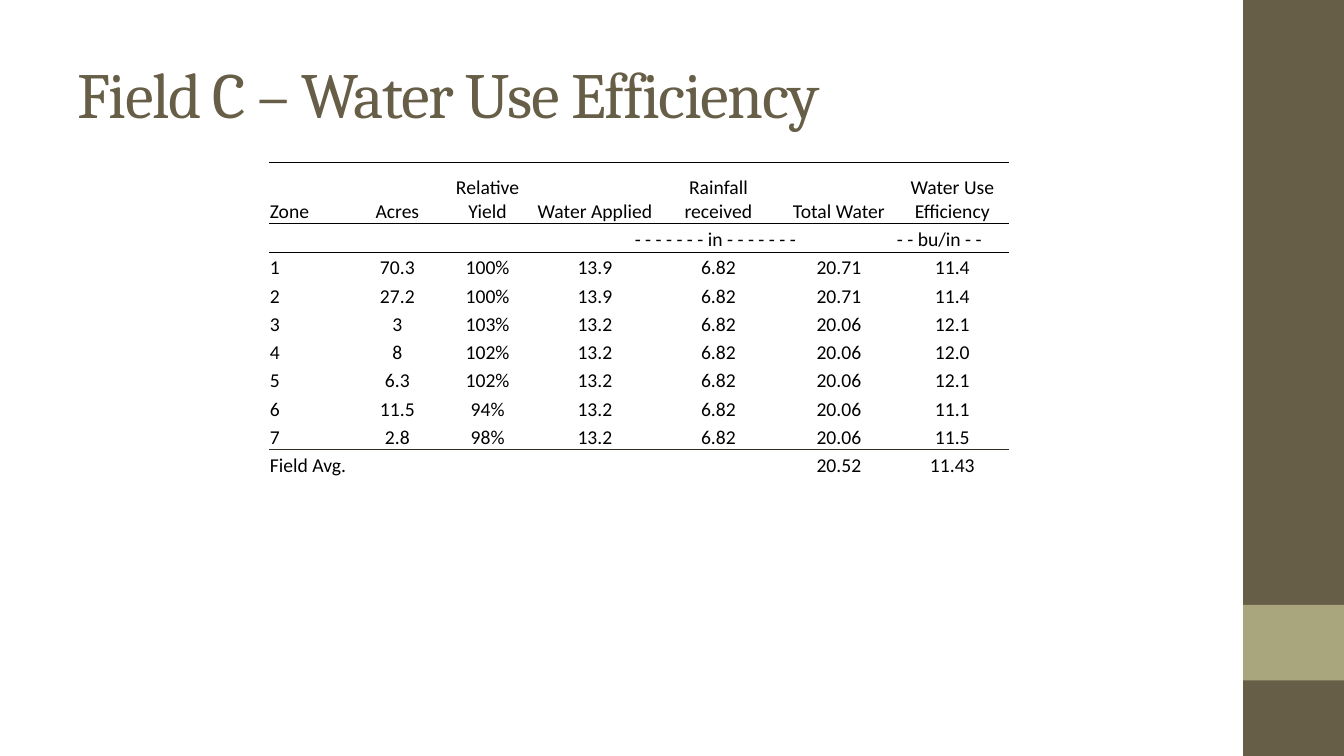
from dataclasses import dataclass

from lxml import etree
from pptx import Presentation
from pptx.dml.color import RGBColor
from pptx.enum.shapes import MSO_SHAPE
from pptx.enum.text import MSO_ANCHOR, PP_ALIGN
from pptx.oxml.ns import qn
from pptx.util import Inches, Pt

RECT = MSO_SHAPE.RECTANGLE
LEFT, CENTER = PP_ALIGN.LEFT, PP_ALIGN.CENTER
MIDDLE, BOTTOM = MSO_ANCHOR.MIDDLE, MSO_ANCHOR.BOTTOM
TITLE_ONLY = 5
PLAIN_TABLE = "{2D5ABB26-0587-4C30-8999-92F81FD0307C}"


@dataclass(frozen=True)
class Theme:
    brown: str = "675E47"
    sage: str = "A9A57C"
    black: str = "000000"
    dark: str = "2F2B20"
    head: str = "Cambria"
    body: str = "Calibri"
    big: int = 46
    small: int = 14


THEME = Theme()
WIDE, HIGH = 13.33, 7.5
BAR = 1
TABLE_LEFT, TABLE_TOP = 0.2 * WIDE, 1.33
COLS = [0.85, 0.85, 0.94, 1.19, 1.26, 1.13, 1.12]
ROW, HEAD_ROW = 0.28, 0.61

HEADS = ["Zone", "Acres", "Relative Yield", "Water Applied",
         "Rainfall received", "Total Water", "Water Use Efficiency"]
UNITS = ["", "", "", "- - - - - - - in - - - - - - -", "", "", "- - bu/in - -"]
ZONES = [
    ["1", "70.3", "100%", "13.9", "6.82", "20.71", "11.4"],
    ["2", "27.2", "100%", "13.9", "6.82", "20.71", "11.4"],
    ["3", "3", "103%", "13.2", "6.82", "20.06", "12.1"],
    ["4", "8", "102%", "13.2", "6.82", "20.06", "12.0"],
    ["5", "6.3", "102%", "13.2", "6.82", "20.06", "12.1"],
    ["6", "11.5", "94%", "13.2", "6.82", "20.06", "11.1"],
    ["7", "2.8", "98%", "13.2", "6.82", "20.06", "11.5"],
]
TOTALS = ["Field Avg.", "", "", "", "", "20.52", "11.43"]
ROWS = [[""] * len(COLS), HEADS, UNITS, *ZONES, TOTALS]
UNIT_ROW, LAST_ROW = 2, len(ROWS) - 1

# Row, first column and last column of each merged run of cells
SPANS = [(0, 0, 2), (UNIT_ROW, 3, 5), (LAST_ROW, 0, 1)]
# Colour and points of the rule above a row
RULES = {1: (THEME.black, 0.5), UNIT_ROW: (THEME.black, 0.5),
         LAST_ROW: (THEME.dark, 1)}


def write(frame, text, font=THEME.body, size=THEME.small, color=THEME.black,
          align=LEFT, track=0):
    para = frame.paragraphs[0]
    para.alignment = align
    if not text:
        # An empty cell keeps the height of a line of this size
        etree.SubElement(para._p, qn("a:endParaRPr"), sz=str(size * 100))
        return
    run = para.add_run()
    run.text = text
    run.font.name = font
    run.font.size = Pt(size)
    run.font.color.rgb = RGBColor.from_string(color)
    if track:
        run.font._element.set("spc", str(track * 100))


def add_bar(slide, top, high, color):
    bar = slide.shapes.add_shape(RECT, Inches(WIDE - BAR), Inches(top),
                                 Inches(BAR), Inches(high))
    bar.shadow.inherit = False
    bar.fill.solid()
    bar.fill.fore_color.rgb = RGBColor.from_string(color)
    bar.line.fill.background()


def add_title(slide, text):
    title = slide.shapes.title
    title.left, title.top = Inches(0.05 * WIDE), Inches(0.04 * HIGH)
    title.width, title.height = Inches(11.11), Inches(1.25)
    title.text_frame.vertical_anchor = MIDDLE
    write(title.text_frame, text, font=THEME.head, size=THEME.big,
          color=THEME.brown, track=-1)


def add_rule(cell, side, color, points):
    line = etree.SubElement(cell._tc.get_or_add_tcPr(), qn(f"a:{side}"),
                            w=str(Pt(points)))
    fill = etree.SubElement(line, qn("a:solidFill"))
    etree.SubElement(fill, qn("a:srgbClr"), val=color)


def fill_cell(cell, text, row, col):
    cell.margin_left = cell.margin_right = cell.margin_top = Inches(0.01)
    cell.margin_bottom = 0
    cell.vertical_anchor = BOTTOM
    for side, edge in (("lnT", row), ("lnB", row + 1)):
        if edge in RULES:
            add_rule(cell, side, *RULES[edge])
    cell.fill.background()
    unit = row == UNIT_ROW and col == len(COLS) - 1
    write(cell.text_frame, text, align=LEFT if col == 0 or unit else CENTER)


def add_grid(slide):
    highs = [HEAD_ROW if cells is HEADS else ROW for cells in ROWS]
    frame = slide.shapes.add_table(
        len(ROWS), len(COLS), Inches(TABLE_LEFT), Inches(TABLE_TOP),
        Inches(sum(COLS)), Inches(sum(highs)))
    table = frame.table
    table.first_row = table.horz_banding = False
    next(frame.element.iter(qn("a:tableStyleId"))).text = PLAIN_TABLE
    for column, wide in zip(table.columns, COLS):
        column.width = Inches(wide)
    for line, high in zip(table.rows, highs):
        line.height = Inches(high)
    for row, first, last in SPANS:
        table.cell(row, first).merge(table.cell(row, last))
    for row, cells in enumerate(ROWS):
        for col, text in enumerate(cells):
            fill_cell(table.cell(row, col), text, row, col)


def main():
    deck = Presentation()
    deck.slide_width, deck.slide_height = Inches(WIDE), Inches(HIGH)
    slide = deck.slides.add_slide(deck.slide_layouts[TITLE_ONLY])
    add_bar(slide, 0, HIGH, THEME.brown)
    add_bar(slide, 0.8 * HIGH, 0.1 * HIGH, THEME.sage)
    add_title(slide, "Field C – Water Use Efficiency")
    add_grid(slide)
    deck.save("out.pptx")


if __name__ == "__main__":
    main()
